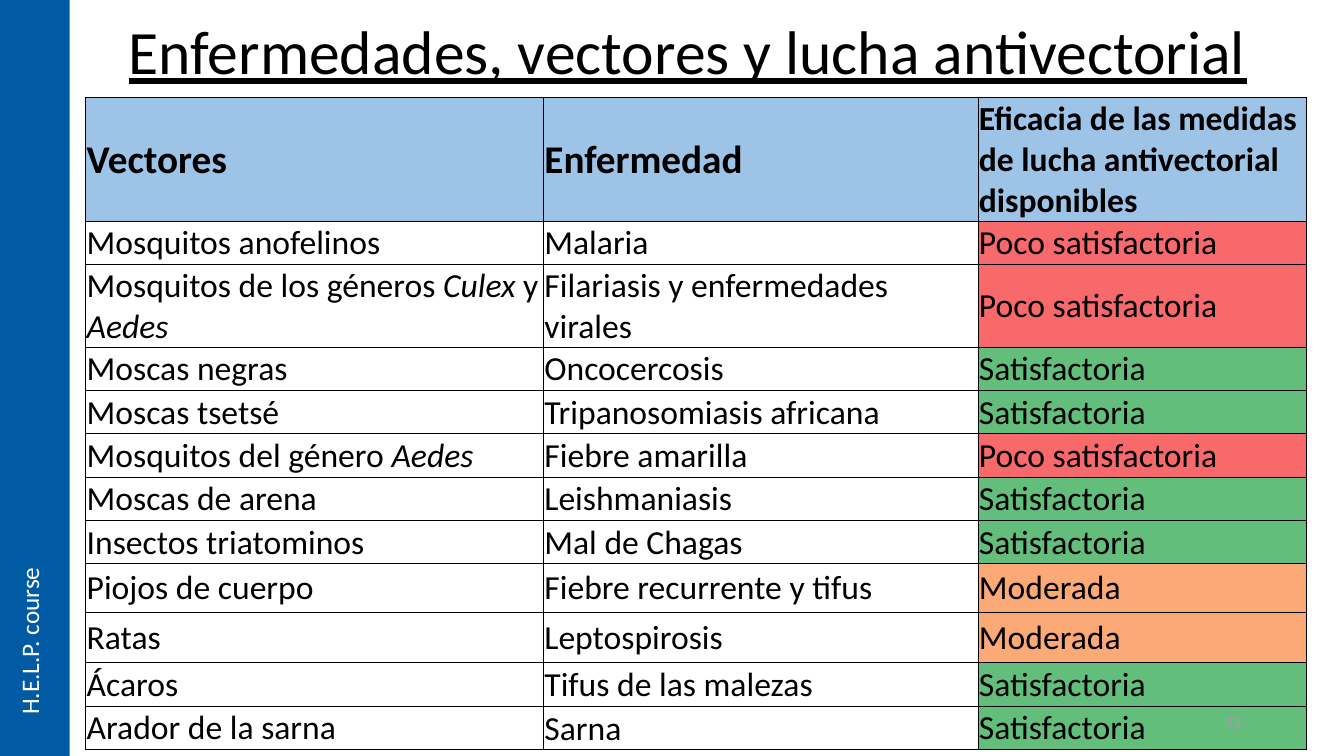
from lxml import etree
from pptx import Presentation
from pptx.dml.color import RGBColor
from pptx.enum import shapes, text
from pptx.oxml import parse_xml
from pptx.oxml.ns import nsdecls
from pptx.util import Inches, Pt

BLACK, WHITE, GREY, BLUE, HEADER = "000000", "FFFFFF", "A0A0A0", "005BA4", "9DC3E6"
RATING_FILLS = {"Poco satisfactoria": "F8696B", "Moderada": "FBAA77", "Satisfactoria": "63BE7B"}


def rgb(value):
    return RGBColor.from_string(value)


def write(tf, content, size=24, color=BLACK, bold=False, underline=None, align=None):
    """Fill the first paragraph; parts between asterisks are italic."""
    p = tf.paragraphs[0]
    p.alignment = align
    for i, part in enumerate(content.split("*")):
        if part:
            r = p.add_run()
            r.text = part
            r.font.name, r.font.size = "Calibri", Pt(size)
            r.font.bold, r.font.italic = bold, i % 2 == 1
            r.font.underline = underline
            r.font.color.rgb = rgb(color)


prs = Presentation()
prs.slide_width, prs.slide_height = Inches(13.33), Inches(7.5)
s = prs.slides.add_slide(prs.slide_layouts[5])

# Side band
band = s.shapes.add_shape(shapes.MSO_SHAPE.RECTANGLE, 0, 0, Inches(0.69), Inches(7.5))
band.shadow.inherit = False
band.fill.solid()
band.fill.fore_color.rgb = rgb(BLUE)
band.line.fill.background()

course = s.shapes.add_textbox(Inches(0.09), Inches(5.61), Inches(0.5), Inches(1.58))
course.text_frame.word_wrap = False
course.text_frame.auto_size = text.MSO_AUTO_SIZE.SHAPE_TO_FIT_TEXT
course.element.txBody.bodyPr.set("vert", "vert270")
write(course.text_frame, "H.E.L.P. course", size=18, color=WHITE)

# Title
title = s.shapes.title
title.left, title.top = Inches(1.07), Inches(0.09)
title.width, title.height = Inches(11.5), Inches(0.91)
tf = title.text_frame
tf.auto_size = text.MSO_AUTO_SIZE.NONE
tf.vertical_anchor = text.MSO_ANCHOR.MIDDLE
write(tf, "Enfermedades, vectores y lucha antivectorial", size=44, underline=True,
      align=text.PP_ALIGN.CENTER)
tf.paragraphs[0].line_spacing = 0.9

# Table
rows = [
    ("Vectores", "Enfermedad", "Eficacia de las medidas de lucha antivectorial disponibles"),
    ("Mosquitos anofelinos", "Malaria", "Poco satisfactoria"),
    ("Mosquitos de los géneros *Culex *y *Aedes*", "Filariasis y enfermedades virales",
     "Poco satisfactoria"),
    ("Moscas negras", "Oncocercosis", "Satisfactoria"),
    ("Moscas tsetsé", "Tripanosomiasis africana", "Satisfactoria"),
    ("Mosquitos del género *Aedes*", "Fiebre amarilla", "Poco satisfactoria"),
    ("Moscas de arena", "Leishmaniasis", "Satisfactoria"),
    ("Insectos triatominos", "Mal de Chagas", "Satisfactoria"),
    ("Piojos de cuerpo", "Fiebre recurrente y tifus", "Moderada"),
    ("Ratas", "Leptospirosis", "Moderada"),
    ("Ácaros", "Tifus de las malezas", "Satisfactoria"),
    ("Arador de la sarna", "Sarna", "Satisfactoria"),
]
widths = [4.54, 4.31, 3.26]
heights = [1.22, 0.42, 0.82] + [0.43] * 5 + [0.48, 0.5, 0.43, 0.43]
table = s.shapes.add_table(len(rows), len(widths), Inches(0.85), Inches(0.97),
                           Inches(sum(widths)), Inches(sum(heights))).table
table.horz_banding = False
for column, width in zip(table.columns, widths):
    column.width = Inches(width)

for i, (row, height) in enumerate(zip(rows, heights)):
    table.rows[i].height = Inches(height)
    for j, content in enumerate(row):
        cell = table.cell(i, j)
        cell.margin_left = cell.margin_top = cell.margin_right = Inches(0.01)
        cell.margin_bottom = 0
        cell.vertical_anchor = text.MSO_ANCHOR.MIDDLE
        for side in ("lnL", "lnR", "lnT", "lnB"):
            cell._tc.get_or_add_tcPr().append(parse_xml(
                f'<a:{side} {nsdecls("a")} w="6350"><a:solidFill>'
                f'<a:srgbClr val="{BLACK}"/></a:solidFill></a:{side}>'))
        fill = HEADER if i == 0 else RATING_FILLS.get(content)
        if fill:
            cell.fill.solid()
            cell.fill.fore_color.rgb = rgb(fill)
        else:
            cell.fill.background()
        write(cell.text_frame, content, size=28 if i == 0 and j < 2 else 24, bold=i == 0)
table.cell(len(rows) - 1, 1).vertical_anchor = text.MSO_ANCHOR.BOTTOM

# Slide number
number = s.shapes.add_textbox(Inches(11.4), Inches(6.95), Inches(1.01), Inches(0.4))
number.text_frame.word_wrap = True
number.text_frame.vertical_anchor = text.MSO_ANCHOR.MIDDLE
write(number.text_frame, "42", size=12, color=GREY, align=text.PP_ALIGN.RIGHT)

prs.save("out.pptx")
